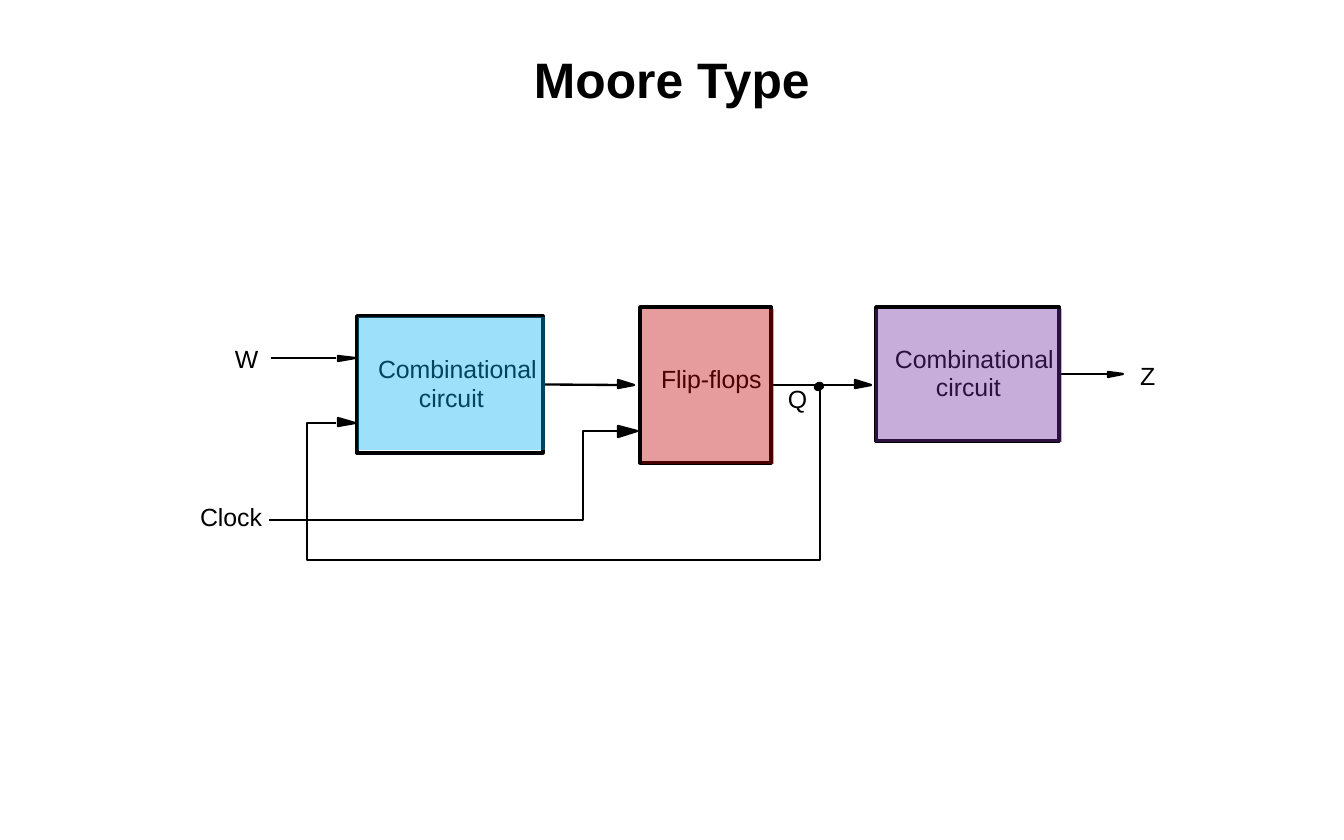
import pptx
import pptx.dml.color
import pptx.enum.shapes
import pptx.enum.text
import pptx.oxml.ns
import pptx.util
import lxml.etree

COLORS = {"ink": "000000", "sky": "00B0F0", "red": "C00000", "violet": "7030A0"}
SCALE = 914400 / 112


def px(length):
    """Turn pixels into EMU."""
    return pptx.util.Emu(round(length * SCALE))


class Diagram:
    """Holds the style and the slide being drawn."""

    font = "Arial"
    label_size = 16
    title_size = 32
    wire_width = 1.5
    block_width = 2.25
    tint_alpha = 39

    def __init__(self, slide):
        """Keep the slide to draw on."""
        self.slide = slide
        self.shapes = slide.shapes

    def color(self, name):
        """Look up a colour by name."""
        return pptx.dml.color.RGBColor.from_string(COLORS[name])

    def stroke(self, line, width):
        """Give a line the ink colour and a width."""
        line.color.rgb = self.color("ink")
        line.width = pptx.util.Pt(width)

    def paint(self, shape, fill=None, width=None):
        """Set fill and outline, and drop the shadow."""
        if fill:
            shape.fill.solid()
            shape.fill.fore_color.rgb = self.color(fill)
        else:
            shape.fill.background()
        if width:
            self.stroke(shape.line, width)
        else:
            shape.line.fill.background()
        shape.shadow.inherit = False
        return shape

    def letter(self, paragraph, text, size, bold=False):
        """Add one run of text."""
        run = paragraph.add_run()
        run.text = text
        run.font.name = self.font
        run.font.size = pptx.util.Pt(size)
        run.font.bold = bold
        run.font.color.rgb = self.color("ink")

    def title(self, text, box):
        """Fill and place the title placeholder."""
        heading = self.shapes.title
        heading.left, heading.top, heading.width, heading.height = map(px, box)
        heading.text_frame.vertical_anchor = pptx.enum.text.MSO_ANCHOR.MIDDLE
        paragraph = heading.text_frame.paragraphs[0]
        paragraph.alignment = pptx.enum.text.PP_ALIGN.CENTER
        self.letter(paragraph, text, self.title_size, bold=True)

    def label(self, text, left, top, width):
        """Add a one-line label without margins."""
        frame = self.shapes.add_textbox(px(left), px(top), px(width), px(30)).text_frame
        frame.margin_left = frame.margin_right = frame.margin_top = frame.margin_bottom = 0
        frame.word_wrap = False
        frame.auto_size = pptx.enum.text.MSO_AUTO_SIZE.SHAPE_TO_FIT_TEXT
        self.letter(frame.paragraphs[0], text, self.label_size)

    def block(self, box):
        """Add an outlined rectangle."""
        kind = pptx.enum.shapes.MSO_SHAPE.RECTANGLE
        return self.paint(self.shapes.add_shape(kind, *map(px, box)), width=self.block_width)

    def tint(self, box, fill):
        """Lay a translucent colour over a block."""
        kind = pptx.enum.shapes.MSO_SHAPE.RECTANGLE
        cover = self.paint(self.shapes.add_shape(kind, *map(px, box)), fill)
        hue = cover._element.spPr.find(".//" + pptx.oxml.ns.qn("a:srgbClr"))
        alpha = lxml.etree.SubElement(hue, pptx.oxml.ns.qn("a:alpha"))
        alpha.set("val", str(self.tint_alpha * 1000))

    def dot(self, box, fill=None):
        """Add a junction dot."""
        kind = pptx.enum.shapes.MSO_SHAPE.OVAL
        self.paint(self.shapes.add_shape(kind, *map(px, box)), fill, self.wire_width)

    def outline(self, points, close=False, fill=None):
        """Draw a path through points."""
        builder = self.shapes.build_freeform(*points[0], scale=SCALE)
        builder.add_line_segments(points[1:], close=close)
        self.paint(builder.convert_to_shape(), fill, self.wire_width)

    def head(self, back, tip, y, above, below):
        """Draw an arrowhead pointing right."""
        points = [(back, y + below), (tip, y), (back, y - above), (back, y)]
        self.outline(points, close=True, fill="ink")

    def wire(self, start, end, y, source=None):
        """Draw a level line, joined to the right side of its source."""
        kind = pptx.enum.shapes.MSO_CONNECTOR.STRAIGHT
        line = self.shapes.add_connector(kind, px(start), px(y), px(end), px(y))
        if source is not None:
            line.begin_connect(source, 3)
        self.stroke(line.line, self.wire_width)
        lxml.etree.SubElement(line._element.spPr, pptx.oxml.ns.qn("a:effectLst"))


def main():
    """Build the Moore machine slide."""
    deck = pptx.Presentation()
    deck.slide_width, deck.slide_height = px(1344), px(840)
    diagram = Diagram(deck.slides.add_slide(deck.slide_layouts[5]))
    diagram.title("Moore Type", (112, 37, 1120, 84))

    next_state = diagram.block((357, 316, 186, 137))
    flip_flops = diagram.block((640, 307, 131, 156))
    output_logic = diagram.block((876, 307, 183, 134))

    for text, left, top, width in [
        ("Combinational", 378, 354, 167),
        ("circuit", 419, 383, 73),
        ("Flip-flops", 661, 364, 102),
        ("Combinational", 895, 344, 167),
        ("circuit", 936, 372, 73),
        ("W", 235, 344, 31),
        ("Clock", 200, 502, 69),
        ("Q", 788, 384, 27),
        ("Z", 1140, 361, 22),
    ]:
        diagram.label(text, left, top, width)

    diagram.wire(271, 336, 358)
    diagram.wire(543, 618, 385, next_state)
    diagram.wire(771, 855, 385, flip_flops)
    diagram.wire(1059, 1108, 374, output_logic)

    clock_route = [(269, 520), (583, 520), (583, 431), (618, 431)]
    feedback_route = [(336, 423), (307, 423), (307, 560), (820, 560), (820, 385)]
    for route in (clock_route, feedback_route):
        diagram.outline(route)

    for back, tip, y, above, below in [
        (338, 355, 358, 2, 3),
        (338, 355, 423, 5, 3),
        (618, 634, 385, 5, 3),
        (618, 637, 431, 5, 6),
        (855, 871, 385, 5, 3),
        (1108, 1123, 374, 2, 3),
    ]:
        diagram.head(back, tip, y, above, below)

    diagram.dot((815, 384, 6, 6), "ink")
    diagram.dot((816, 383, 7, 6))

    diagram.tint((875, 309, 187, 133), "violet")
    diagram.tint((358, 317, 187, 133), "sky")
    diagram.tint((642, 309, 132, 155), "red")
    deck.save("out.pptx")


if __name__ == "__main__":
    main()
